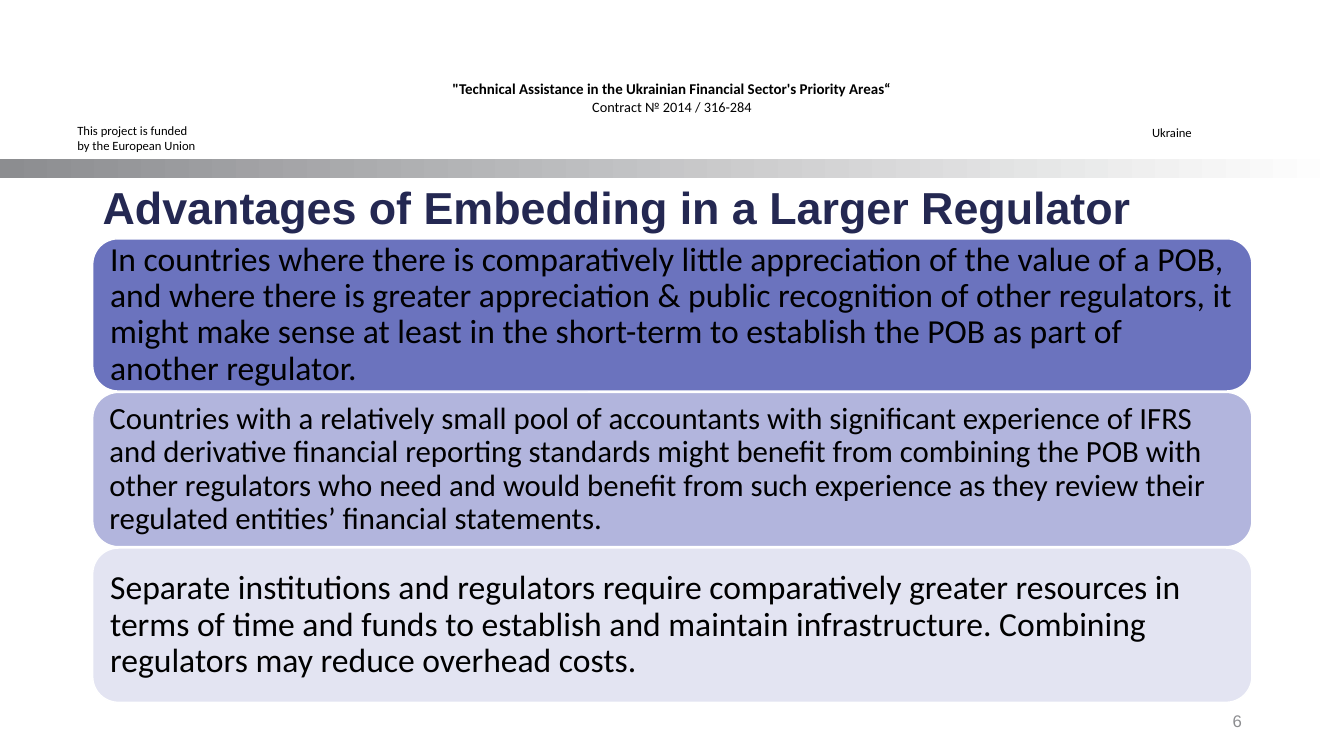
"""Build the slide on the advantages of embedding in a larger regulator."""
from lxml import etree
from pptx import Presentation
from pptx.dml.color import RGBColor
from pptx.enum.shapes import MSO_SHAPE
from pptx.enum.text import MSO_ANCHOR, PP_ALIGN
from pptx.oxml.ns import qn
from pptx.util import Pt

RECTANGLE, ROUNDED = MSO_SHAPE.RECTANGLE, MSO_SHAPE.ROUNDED_RECTANGLE
TOP, MIDDLE = MSO_ANCHOR.TOP, MSO_ANCHOR.MIDDLE
LEFT, CENTER, RIGHT = PP_ALIGN.LEFT, PP_ALIGN.CENTER, PP_ALIGN.RIGHT

COLORS = {
    "white": "FFFFFF", "black": "000000", "gray": "8C8D90", "navy": "242852",
    "strong": "5C64B7", "medium": "9297CF", "light": "C9CBE7",
}
CONTENT_LEFT, CONTENT_WIDTH = 66.24, 828
CARDS_TOP, CARD_GAP = 170.6, 1
CARDS = [
    (108.7, "strong", 90, 24, 7.2,
     "In countries where there is comparatively little appreciation of the value of a POB, "
     "and where there is greater appreciation & public recognition of other regulators, it "
     "might make sense at least in the short-term to establish the POB as part of "
     "another regulator."),
    (110.2, "medium", 70, 22, 6.6,
     "Countries with a relatively small pool of accountants with significant experience of IFRS "
     "and derivative financial reporting standards might benefit from combining the POB with "
     "other regulators who need and would benefit from such experience as they review their "
     "regulated entities’ financial statements."),
    (110.2, "light", 50, 24, 7.2,
     "Separate institutions and regulators require comparatively greater resources in "
     "terms of time and funds to establish and maintain infrastructure. Combining "
     "regulators may reduce overhead costs."),
]


class SlideBuilder:
    def __init__(self, slide, colors):
        self.slide = slide
        self.colors = {name: RGBColor.from_string(value) for name, value in colors.items()}

    def set_text(self, shape, lines, align=LEFT, spacing=1.0, color="black", **frame_format):
        frame = shape.text_frame
        for name, value in frame_format.items():
            setattr(frame, name, value)
        for index, (text, font_format) in enumerate(lines):
            paragraph = frame.paragraphs[0] if index == 0 else frame.add_paragraph()
            paragraph.alignment = align
            paragraph.line_spacing = spacing
            run = paragraph.add_run()
            run.text = text
            for name, value in ({"name": "Calibri"} | font_format).items():
                setattr(run.font, name, value)
            run.font.color.rgb = self.colors[color]

    def text(self, box, lines, **text_format):
        shape = self.slide.shapes.add_textbox(*map(Pt, box))
        self.set_text(shape, lines, **{"word_wrap": True} | text_format)

    def shape(self, kind, box):
        shape = self.slide.shapes.add_shape(kind, *map(Pt, box))
        shape.shadow.inherit = False
        return shape

    def gradient_bar(self, box, start, end):
        bar = self.shape(RECTANGLE, box)
        bar.line.fill.background()
        bar.fill.gradient()
        bar.fill.gradient_angle = 0
        for stop, color in zip(bar.fill.gradient_stops, (start, end)):
            stop.color.rgb = self.colors[color]

    def card(self, box, color, opacity, size, inset, text):
        card = self.shape(ROUNDED, box)
        card.fill.solid()
        card.fill.fore_color.rgb = self.colors[color]
        fill_color = card.element.spPr.find(qn("a:solidFill"))[0]
        etree.SubElement(fill_color, qn("a:alpha"), val=str(opacity * 1000))
        card.line.color.rgb = self.colors["white"]
        card.line.width = Pt(1)
        margins = {f"margin_{side}": Pt(inset) for side in ("left", "top", "right", "bottom")}
        self.set_text(card, [(text, {"size": Pt(size)})], spacing=0.9,
                      word_wrap=True, vertical_anchor=MIDDLE, **margins)


def main():
    presentation = Presentation()
    presentation.slide_width, presentation.slide_height = Pt(960), Pt(540)
    slide = presentation.slides.add_slide(presentation.slide_layouts[6])
    builder = SlideBuilder(slide, COLORS)

    builder.gradient_bar((0, 113.8, 960, 13.7), "gray", "white")
    builder.text((678.24, 500.4, 216, 28.8), [("6", {"name": "Arial", "size": Pt(12)})],
                 align=RIGHT, color="gray", vertical_anchor=MIDDLE)
    builder.text((48, 18, 864, 90), [
        ("\"Technical Assistance in the Ukrainian Financial Sector's Priority Areas“",
         {"size": Pt(10.7), "bold": True}),
        ("Contract № 2014 / 316-284", {"size": Pt(10.2)}),
    ], align=CENTER, vertical_anchor=TOP, margin_top=Pt(39))
    small = {"size": Pt(9)}
    builder.text((48.2, 84.2, 100, 28.8),
                 [("This project is funded", small), ("by the European Union", small)],
                 word_wrap=False)
    builder.text((815.8, 85.7, 43.2, 18), [("Ukraine", small)], word_wrap=False)
    builder.text((CONTENT_LEFT, 115.9, CONTENT_WIDTH, 68.4),
                 [("Advantages of Embedding in a Larger Regulator",
                   {"name": "Arial", "size": Pt(32), "bold": True})],
                 spacing=0.9, color="navy", vertical_anchor=MIDDLE)

    top = CARDS_TOP
    for height, *card_format in CARDS:
        builder.card((CONTENT_LEFT, top, CONTENT_WIDTH, height), *card_format)
        top += height + CARD_GAP

    presentation.save("out.pptx")


if __name__ == "__main__":
    main()
